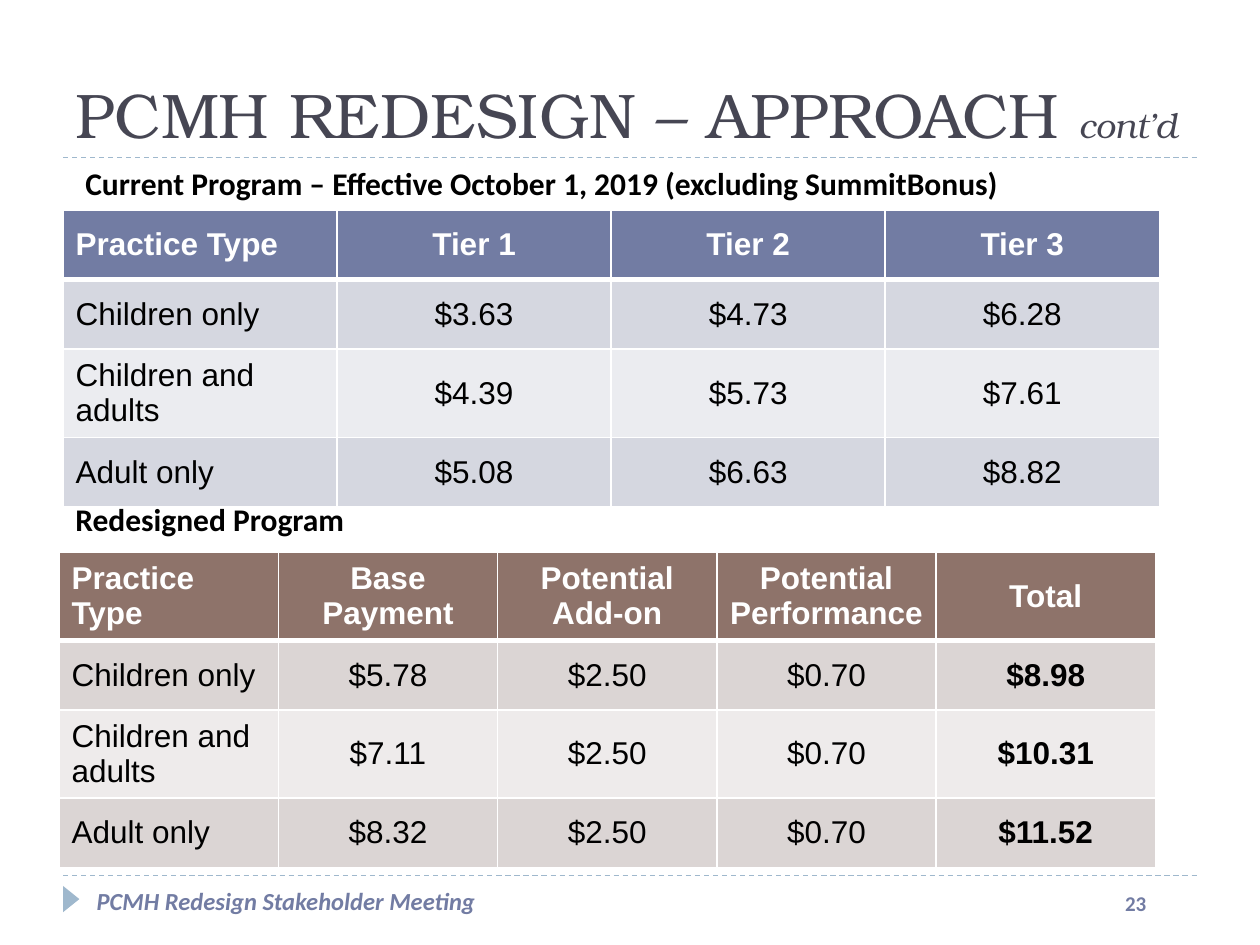
"""Build the slide comparing current and redesigned program payments."""
import pptx
import pptx.dml.color
import pptx.enum.dml
import pptx.enum.shapes
import pptx.enum.text
import pptx.oxml
import pptx.oxml.ns
import pptx.util

Cm, Pt = pptx.util.Cm, pptx.util.Pt
RGB = pptx.dml.color.RGBColor
ALIGN = pptx.enum.text.PP_ALIGN
ANCHOR = pptx.enum.text.MSO_ANCHOR
WHITE, BLACK = RGB(255, 255, 255), RGB(0, 0, 0)
INK, BLUE, SKY = RGB(0x46, 0x46, 0x53), RGB(0x72, 0x7C, 0xA3), RGB(0x9F, 0xB8, 0xCD)
COOL = BLUE, RGB(0xD5, 0xD7, 0xE0), RGB(0xEB, 0xEC, 0xF0)
WARM = RGB(0x8E, 0x73, 0x6A), RGB(0xDB, 0xD5, 0xD4), RGB(0xEE, 0xEB, 0xEB)

TITLE = [("PCMH REDESIGN – APPROACH ", 36, False), ("cont’d", 20, True)]
TEXTS = [
    ("23", (22.43, 17.83, 1.47, 1.02), 12, BLUE, False, True),
    ("PCMH Redesign Stakeholder Meeting", (1.7, 17.73, 11.23, 1.32), 14, BLUE, True, True),
    ("Current Program – Effective October 1, 2019 (excluding SummitBonus)",
     (1.47, 3.18, 21.34, 1.02), 18, BLACK, False, False),
    ("Redesigned Program", (1.27, 9.96, 7.34, 1.02), 18, BLACK, False, False),
]
CURRENT = [
    ("Practice Type", "Tier 1", "Tier 2", "Tier 3"),
    ("Children only", "$3.63", "$4.73", "$6.28"),
    ("Children and adults", "$4.39", "$5.73", "$7.61"),
    ("Adult only", "$5.08", "$6.63", "$8.82"),
]
PLANNED = [
    ("Practice Type", "Base Payment", "Potential Add-on", "Potential Performance", "Total"),
    ("Children only", "$5.78", "$2.50", "$0.70", "$8.98"),
    ("Children and adults", "$7.11", "$2.50", "$0.70", "$10.31"),
    ("Adult only", "$8.32", "$2.50", "$0.70", "$11.52"),
]
TABLES = [
    (CURRENT, 1.27, 4.24, COOL, None),
    (PLANNED, 1.19, 11.13, WARM, 4),
]
WIDTH, ROW = 22.1, 1.4
RULES = 3.18, 17.65


def add_text(slide, box, wrap=True):
    frame = slide.shapes.add_textbox(*map(Cm, box)).text_frame
    frame.word_wrap = wrap
    return frame


def set_font(font, name, size, color, bold=False, italic=False):
    font.name, font.size = name, Pt(size)
    font.bold, font.italic = bold, italic
    font.color.rgb = color


def add_edges(cell, row):
    props = cell._tc.get_or_add_tcPr()
    thick = {"T": 3 if row == 1 else 1, "B": 3 if row == 0 else 1}
    for side in "LRTB":
        props.append(pptx.oxml.parse_xml(
            f'<a:ln{side} {pptx.oxml.ns.nsdecls("a")} w="{Pt(thick.get(side, 1))}">'
            f'<a:solidFill><a:srgbClr val="{WHITE}"/></a:solidFill></a:ln{side}>'))


def add_grid(slide, rows, left, top, fills, total):
    count = len(rows[0])
    table = slide.shapes.add_table(
        len(rows), count, Cm(left), Cm(top), Cm(WIDTH), Cm(ROW * len(rows))).table
    for col in table.columns:
        col.width = Cm(WIDTH / count)
    for r, row in enumerate(rows):
        table.rows[r].height = Cm(ROW)
        for c, text in enumerate(row):
            cell = table.cell(r, c)
            add_edges(cell, r)
            cell.fill.solid()
            cell.fill.fore_color.rgb = fills[0] if r == 0 else fills[2 - r % 2]
            cell.vertical_anchor = ANCHOR.MIDDLE
            cell.text = text
            para = cell.text_frame.paragraphs[0]
            para.alignment = ALIGN.CENTER if c else ALIGN.LEFT
            set_font(para.font, "Arial", 18, BLACK if r else WHITE, r == 0 or c == total)


def add_rule(slide, y):
    rule = slide.shapes.add_connector(
        pptx.enum.shapes.MSO_CONNECTOR.STRAIGHT, Cm(1.27), Cm(y), Cm(24.13), Cm(y))
    rule.line.color.rgb = SKY
    rule.line.width = Pt(0.75)
    rule.line.dash_style = pptx.enum.dml.MSO_LINE.DASH
    rule._element.spPr.append(
        pptx.oxml.parse_xml(f'<a:effectLst {pptx.oxml.ns.nsdecls("a")}/>'))


def main():
    deck = pptx.Presentation()
    deck.slide_width, deck.slide_height = Cm(25.4), Cm(19.05)
    slide = deck.slides.add_slide(deck.slide_layouts[6])

    for y in RULES:
        add_rule(slide, y)
    mark = slide.shapes.add_shape(
        pptx.enum.shapes.MSO_SHAPE.ISOSCELES_TRIANGLE,
        Cm(1.17), Cm(17.96), Cm(0.53), Cm(0.33))
    mark.rotation = 90
    mark.shadow.inherit = False
    mark.fill.solid()
    mark.fill.fore_color.rgb = SKY
    mark.line.fill.background()

    frame = add_text(slide, (1.27, 0.43, 23.16, 2.75))
    frame.vertical_anchor = ANCHOR.BOTTOM
    for text, size, italic in TITLE:
        run = frame.paragraphs[0].add_run()
        run.text = text
        set_font(run.font, "TeX Gyre Bonum", size, INK, italic=italic)

    for text, box, size, color, italic, wrap in TEXTS:
        para = add_text(slide, box, wrap).paragraphs[0]
        para.text = text
        set_font(para.font, "Calibri", size, color, True, italic)

    for grid in TABLES:
        add_grid(slide, *grid)
    deck.save("out.pptx")


if __name__ == "__main__":
    main()
